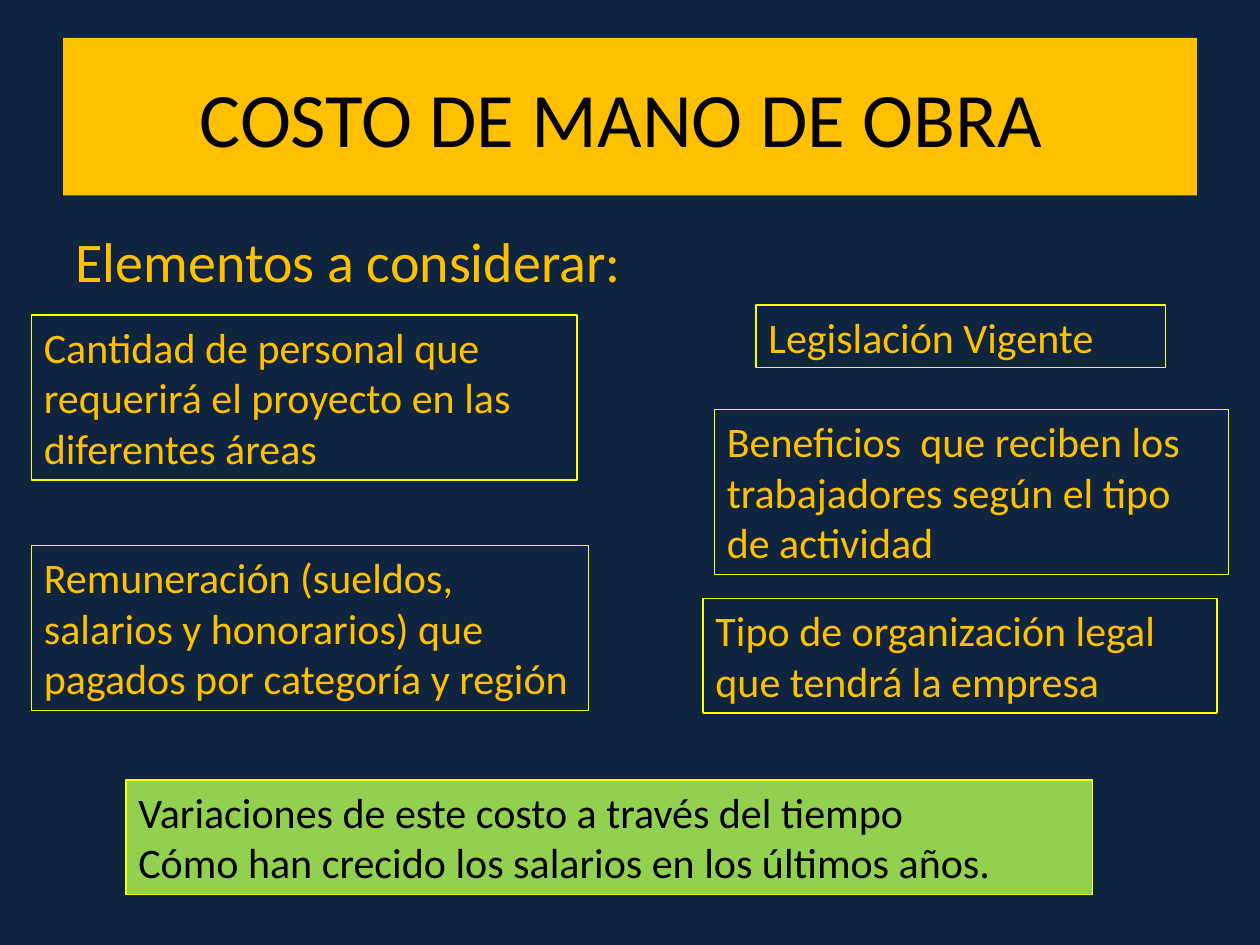
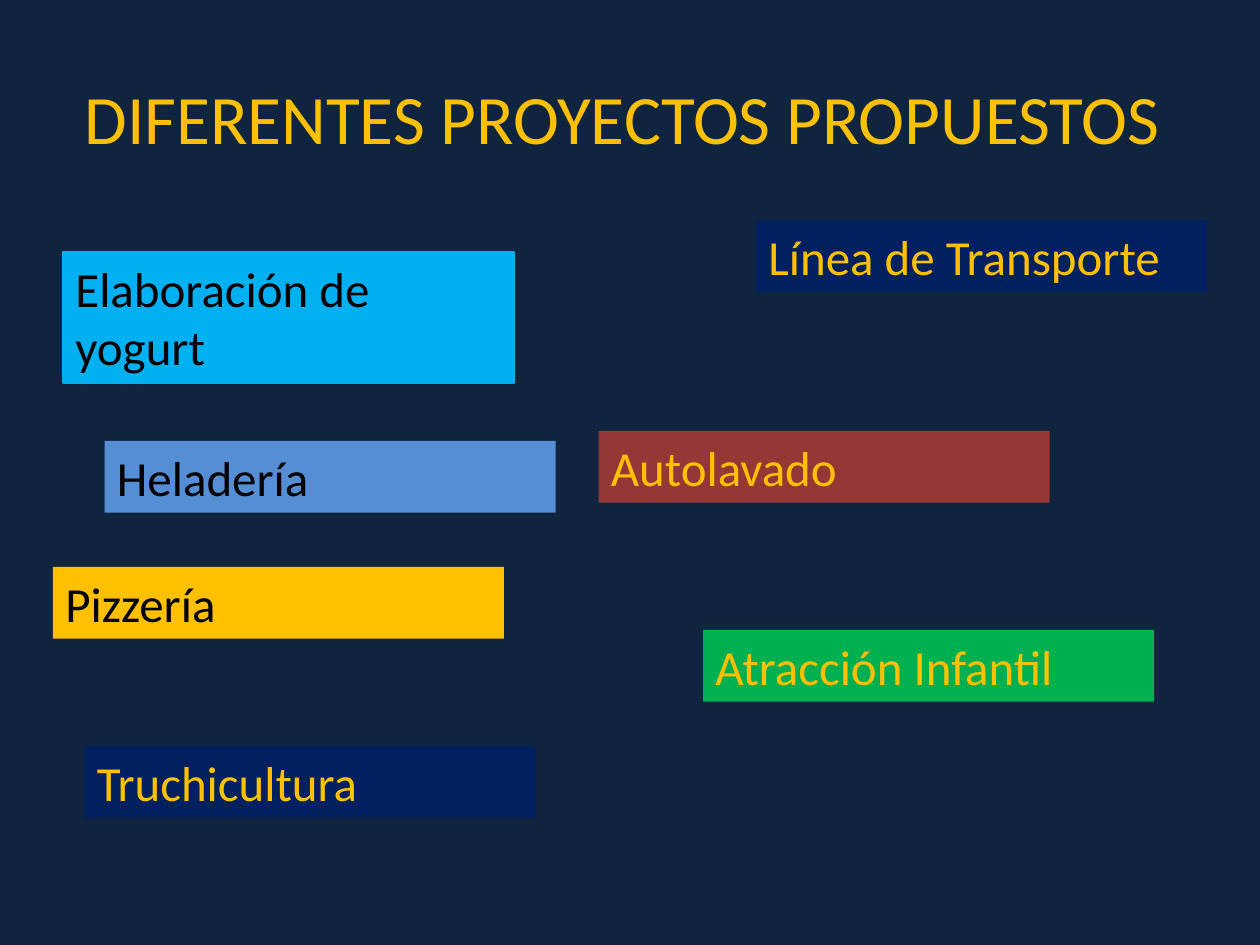
from pptx import Presentation
from pptx.dml.color import RGBColor
from pptx.enum.shapes import MSO_SHAPE
from pptx.enum.text import MSO_ANCHOR, MSO_AUTO_SIZE, PP_ALIGN
from pptx.oxml.xmlchemy import OxmlElement
from pptx.util import Inches, Pt

FONT = "Calibri"
COLORS = {
    "night": "0F243E",
    "gold": "FFC000",
    "black": "000000",
    "yellow": "FFFF00",
    "lime": "92D050",
    "sky": "00B0F0",
    "blue": "558ED5",
    "navy": "002060",
    "brick": "953735",
    "green": "00B050",
}


def write(shape, text, size, color, align=PP_ALIGN.LEFT):
    shape.text_frame.text = text
    for para in shape.text_frame.paragraphs:
        para.alignment = align
        para.font.name = FONT
        para.font.size = Pt(size)
        para.font.color.rgb = RGBColor.from_string(COLORS[color])


def add_box(page, place, text, size, color, fill=None, line=None):
    """Add a text rectangle; place is left, top, width, height in inches."""
    box = page.shapes.add_shape(MSO_SHAPE.RECTANGLE, *map(Inches, place))
    box.shadow.inherit = False
    for part, shade in ((box.fill, fill), (box.line.fill, line)):
        if shade:
            part.solid()
            part.fore_color.rgb = RGBColor.from_string(COLORS[shade])
        else:
            part.background()
    if line:
        box.line.width = Pt(0.75)
    frame = box.text_frame
    frame.word_wrap = True
    frame.auto_size = MSO_AUTO_SIZE.SHAPE_TO_FIT_TEXT
    frame.vertical_anchor = MSO_ANCHOR.TOP
    write(box, text, size, color)


deck = Presentation()
deck.slide_width, deck.slide_height = Inches(10), Inches(7.5)
title_and_content, title_only = deck.slide_layouts[1], deck.slide_layouts[5]

pages = []
for layout, heading, size, color in (
    (title_and_content, "COSTO DE MANO DE OBRA ", 44, "black"),
    (title_only, "DIFERENTES PROYECTOS PROPUESTOS ", 39.6, "gold"),
):
    page = deck.slides.add_slide(layout)
    page.background.fill.solid()
    page.background.fill.fore_color.rgb = RGBColor.from_string(COLORS["night"])
    title = page.shapes.title
    title.left, title.top = Inches(0.5), Inches(0.3)
    title.width, title.height = Inches(9), Inches(1.25)
    title.text_frame.vertical_anchor = MSO_ANCHOR.MIDDLE
    title.text_frame.auto_size = MSO_AUTO_SIZE.NONE
    write(title, heading, size, color, PP_ALIGN.CENTER)
    pages.append(page)
cost_page, projects_page = pages

# Labour cost
band = cost_page.shapes.title.fill
band.solid()
band.fore_color.rgb = RGBColor.from_string(COLORS["gold"])

body = cost_page.placeholders[1]
body.left, body.top = Inches(0.5), Inches(1.75)
body.width, body.height = Inches(9), Inches(4.95)
body.text_frame.auto_size = MSO_AUTO_SIZE.NONE
write(body, "Elementos a considerar:", 32, "gold")
intro = body.text_frame.paragraphs[0]
intro_props = intro._p.get_or_add_pPr()
intro_props.set("marL", str(Inches(0.38)))
intro_props.set("indent", str(-Inches(0.38)))
intro_props.insert_element_before(OxmlElement("a:buNone"), "a:tabLst", "a:defRPr", "a:extLst")

factors = (
    ((0.25, 2.5, 4.33, 1.31), "Cantidad de personal que requerirá el proyecto en las diferentes áreas"),
    ((5.67, 3.25, 4.08, 1.31), "Beneficios  que reciben los trabajadores según el tipo de actividad"),
    ((6, 2.42, 3.25, 0.5), "Legislación Vigente"),
    ((0.25, 4.33, 4.42, 1.31), "Remuneración (sueldos, salarios y honorarios) que pagados por categoría y región"),
    ((5.58, 4.75, 4.08, 0.91), "Tipo de organización legal que tendrá la empresa"),
)
for place, text in factors:
    add_box(cost_page, place, text, 24, "gold", line="yellow")
add_box(
    cost_page,
    (1, 6.19, 7.67, 0.91),
    "Variaciones de este costo a través del tiempo\n"
    "Cómo han crecido los salarios en los últimos años.",
    24, "black", fill="lime", line="yellow",
)

# Proposed projects
projects = (
    (0.5, 2, 1.04, "Elaboración de yogurt", "black", "sky", "sky"),
    (0.83, 3.5, 0.57, "Heladería", "black", "blue", None),
    (0.42, 4.5, 0.57, "Pizzería", "black", "gold", None),
    (0.67, 5.92, 0.57, "Truchicultura", "gold", "navy", None),
    (6, 1.75, 0.57, "Línea de Transporte", "gold", "navy", None),
    (4.75, 3.42, 0.57, "Autolavado", "gold", "brick", None),
    (5.58, 5, 0.57, "Atracción Infantil", "gold", "green", None),
)
for left, top, height, name, color, fill, line in projects:
    add_box(projects_page, (left, top, 3.58, height), name, 28, color, fill, line)

deck.save("out.pptx")
